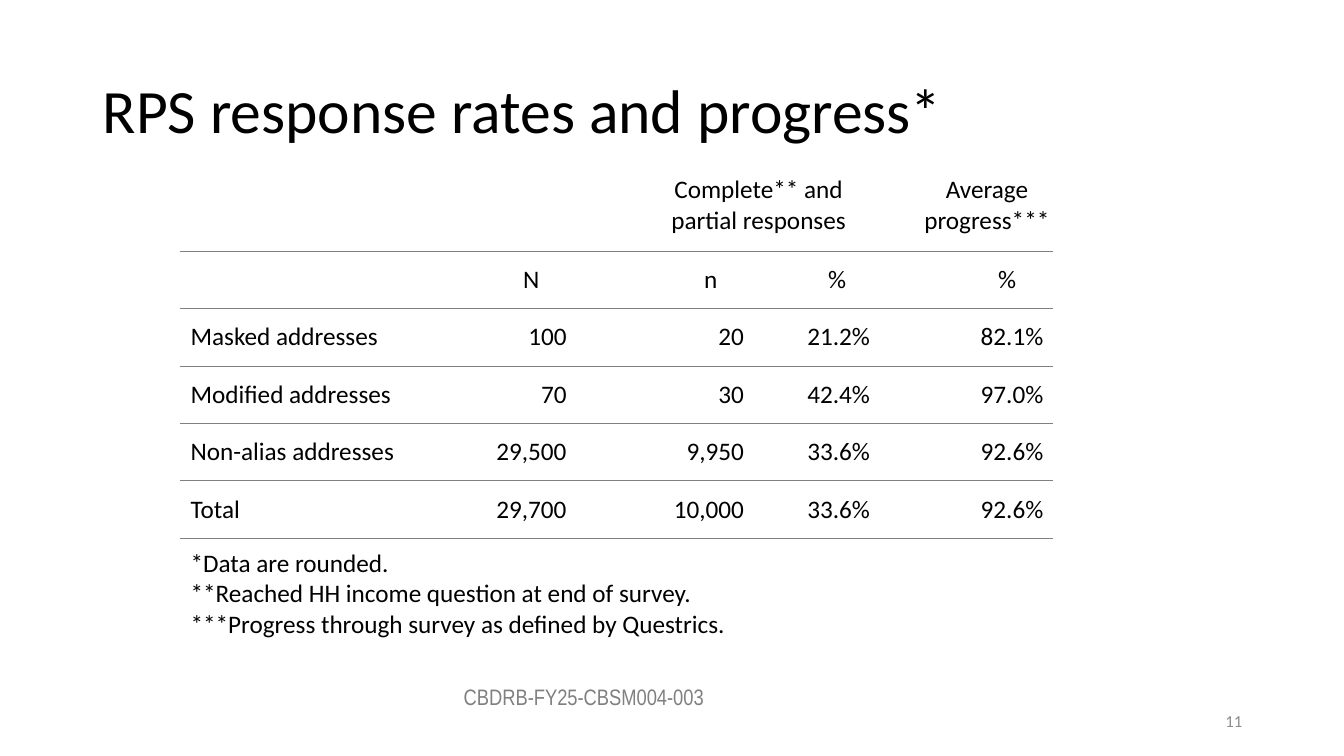
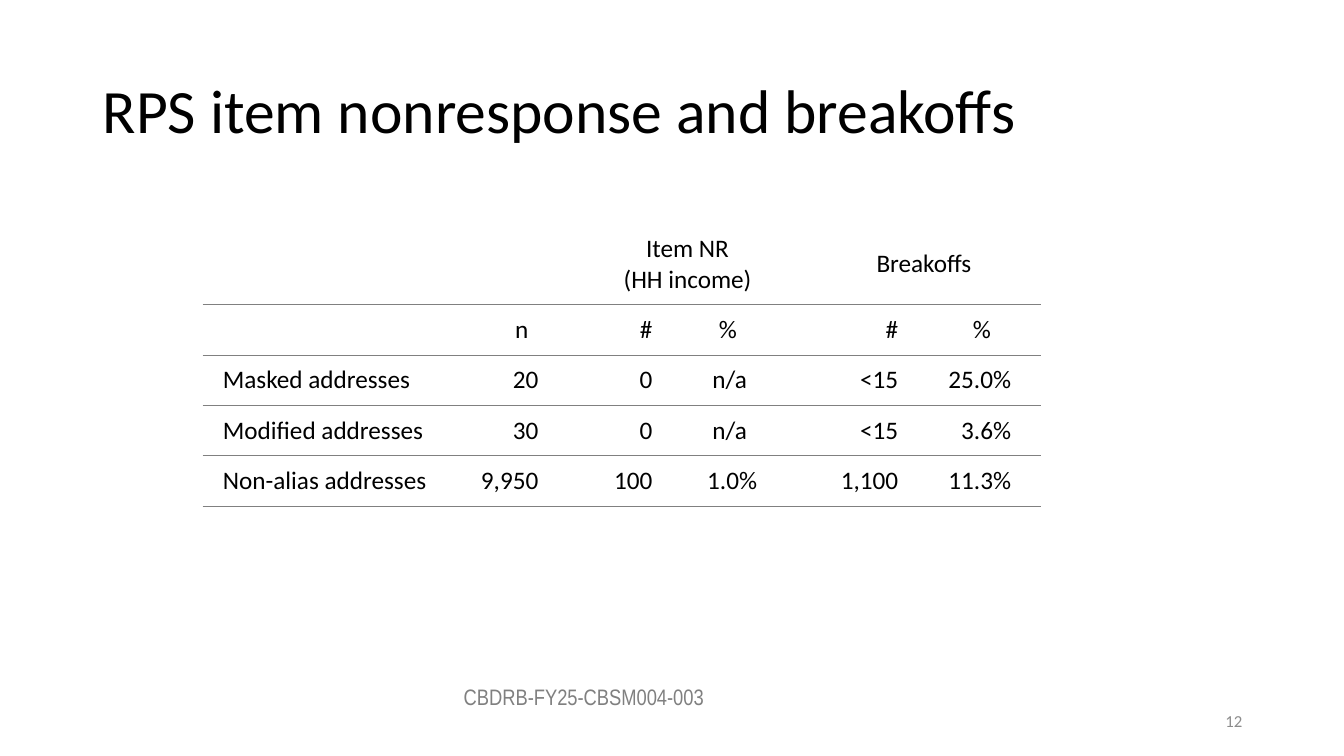
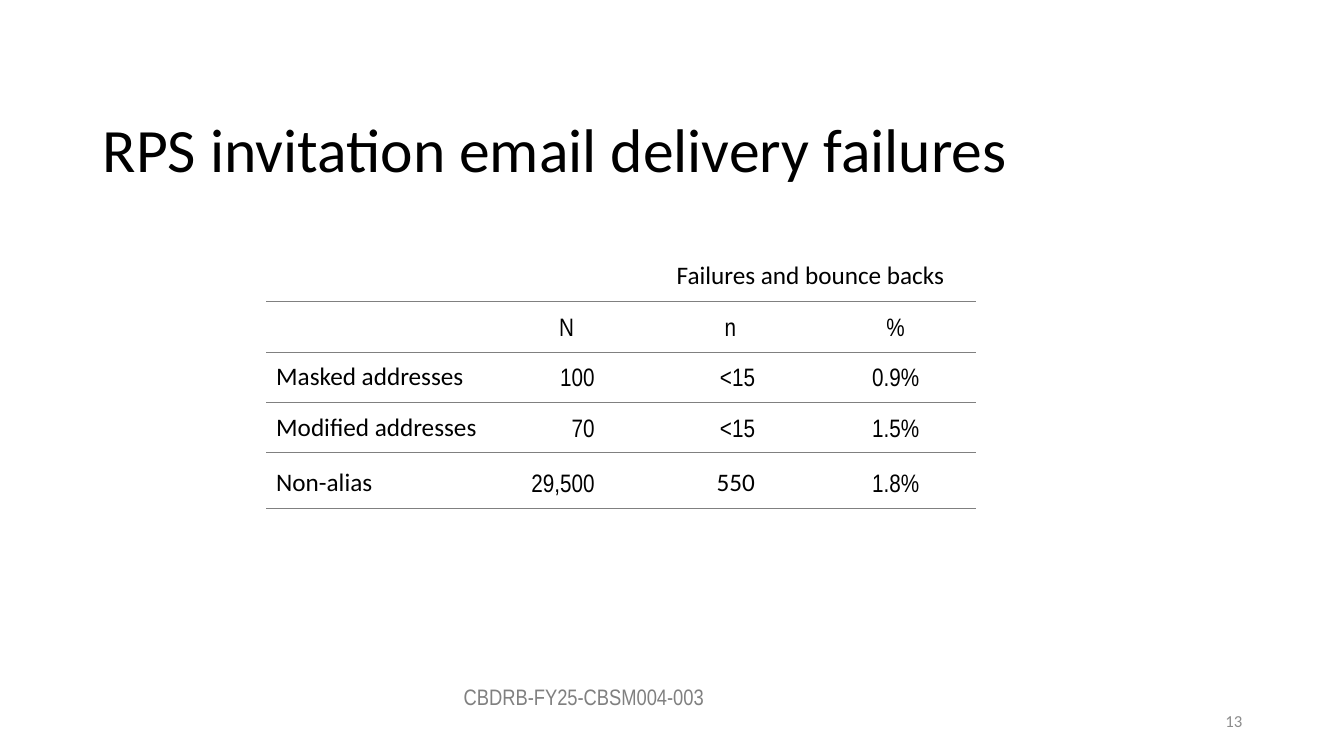
import dataclasses

import pptx
import pptx.dml.color
import pptx.enum.text
import pptx.oxml
import pptx.oxml.ns
import pptx.util

ALIGN = pptx.enum.text.PP_ALIGN
ANCHOR = pptx.enum.text.MSO_ANCHOR
SLIDE_WIDTH = pptx.util.Inches(13.33)
SLIDE_HEIGHT = pptx.util.Inches(7.5)
BODY_FONT = "Calibri"
NARROW_FONT = "Arial Narrow"
BLACK = "000000"
GRAY = "808080"
NUMBER_GRAY = "8C8C8C"
PLAIN_TABLE_STYLE = "{2D5ABB26-0587-4C30-8999-92F81FD0307C}"
FOOTER = "CBDRB-FY25-CBSM004-003"


@dataclasses.dataclass
class Cell:
    """Text of a table cell with its side insets in inches."""
    text: str = ""
    align: ALIGN = ALIGN.LEFT
    left: float = 0.1
    right: float = 0.1
    font: str = BODY_FONT
    span: int = 1


def across(percent):
    """Turn a percentage of the slide's width into a length."""
    return round(SLIDE_WIDTH * percent / 100)


def down(percent):
    """Turn a percentage of the slide's height into a length."""
    return round(SLIDE_HEIGHT * percent / 100)


def color(value):
    """Turn a hex string into a colour."""
    return pptx.dml.color.RGBColor.from_string(value)


def write(frame, text, size=18, font=BODY_FONT, fill=BLACK, align=ALIGN.LEFT, spacing=None):
    """Write one paragraph per line of the text."""
    for index, line in enumerate(text.split("\n")):
        paragraph = frame.add_paragraph() if index else frame.paragraphs[0]
        paragraph.alignment = align
        paragraph.line_spacing = spacing
        run = paragraph.add_run()
        run.text = line
        run.font.size = pptx.util.Pt(size)
        run.font.name = font
        run.font.color.rgb = color(fill)


def add_text(slide, left, top, width, height, text, anchor=ANCHOR.MIDDLE, inset=None, **style):
    """Add a text box placed by percentages of the slide."""
    box = slide.shapes.add_textbox(across(left), down(top), across(width), down(height))
    frame = box.text_frame
    frame.word_wrap = True
    frame.vertical_anchor = anchor
    if inset is not None:
        frame.margin_left = frame.margin_right = pptx.util.Inches(inset)
        frame.margin_top = frame.margin_bottom = pptx.util.Inches(inset)
    write(frame, text, **style)


def add_slide(presentation, number, title, title_top=5.33, title_width=86.27):
    """Add a slide with its title, page number and footer."""
    slide = presentation.slides.add_slide(presentation.slide_layouts[6])
    add_text(slide, 6.9, title_top, title_width, 19.33, title, size=44, spacing=0.9)
    add_text(slide, 70.67, 92.67, 22.51, 5.33, str(number), size=12,
             fill=NUMBER_GRAY, align=ALIGN.RIGHT)
    add_text(slide, 34.13, 89.73, 30.16, 4.93, FOOTER, anchor=ANCHOR.TOP, inset=0.05,
             size=16, font=NARROW_FONT, fill=GRAY)
    return slide


def add_borders(cell, sides):
    """Draw thin gray lines on the given sides of a cell."""
    properties = cell._tc.get_or_add_tcPr()
    for index, side in enumerate(sides):
        line = pptx.oxml.parse_xml(
            f'<a:ln{side} {pptx.oxml.ns.nsdecls("a")} w="{pptx.util.Pt(0.5)}"><a:solidFill>'
            f'<a:srgbClr val="{GRAY}"/></a:solidFill></a:ln{side}>')
        properties.insert(index, line)


def fill_cell(target, content, anchor):
    """Give a table cell its text, insets and anchor."""
    target.vertical_anchor = anchor
    target.margin_left = pptx.util.Inches(content.left)
    target.margin_right = pptx.util.Inches(content.right)
    target.margin_top = target.margin_bottom = pptx.util.Inches(0.1)
    write(target.text_frame, content.text, font=content.font, align=content.align)


def add_table(slide, left, top, widths, heights, rows, anchor=ANCHOR.MIDDLE, notes=False):
    """Add a ruled table; the last row may hold notes without a line below."""
    frame = slide.shapes.add_table(len(heights), len(widths), across(left), down(top),
                                   across(sum(widths)), down(sum(heights)))
    table = frame.table
    table.first_row = table.horz_banding = False
    table._tbl.tblPr.find(pptx.oxml.ns.qn("a:tableStyleId")).text = PLAIN_TABLE_STYLE
    for column, width in zip(table.columns, widths):
        column.width = across(width)
    for row, height in zip(table.rows, heights):
        row.height = down(height)
    for row_index, row in enumerate(rows):
        is_notes = notes and row_index == len(rows) - 1
        sides = "B" if row_index == 0 else "T" if is_notes else "TB"
        for column_index in range(len(widths)):
            cell = table.cell(row_index, column_index)
            cell.fill.background()
            add_borders(cell, sides)
        column_index = 0
        for content in row:
            cell = table.cell(row_index, column_index)
            if content.span > 1:
                cell.merge(table.cell(row_index, column_index + content.span - 1))
            if content.text:
                fill_cell(cell, content, anchor)
            column_index += content.span


def body_rows(formats, records):
    """Give every record the cell formats of its columns."""
    return [[dataclasses.replace(style, text=text) for style, text in zip(formats, record)]
            for record in records]


def add_response_slide(presentation):
    """Add the slide of response rates and progress."""
    slide = add_slide(presentation, 11, "RPS response rates and progress*", title_width=88.82)
    header = [Cell(), Cell(),
              Cell("Complete** and\npartial responses", ALIGN.CENTER, span=2),
              Cell("Average progress***", ALIGN.CENTER, 0.2, 0)]
    units = [Cell(), Cell("N", ALIGN.CENTER, 0.4, 0.3), Cell("n", ALIGN.CENTER, 0.4),
             Cell("%", ALIGN.CENTER), Cell("%", ALIGN.CENTER, 0.7)]
    formats = [Cell(), Cell(align=ALIGN.RIGHT, right=0.5), Cell(align=ALIGN.RIGHT, right=0.3),
               Cell(align=ALIGN.RIGHT, right=0.3), Cell(align=ALIGN.RIGHT, left=0)]
    body = body_rows(formats, [
        ("Masked addresses", "100", "20", "21.2%", "82.1%"),
        ("Modified addresses", "70", "30", "42.4%", "97.0%"),
        ("Non-alias addresses", "29,500", "9,950", "33.6%", "92.6%"),
        ("Total", "29,700", "10,000", "33.6%", "92.6%")])
    notes = [Cell("*Data are rounded.\n"
                  "**Reached HH income question at end of survey.\n"
                  "***Progress through survey as defined by Questrics.", span=5)]
    add_table(slide, 13.43, 21.2, [18.98, 13.5, 11.7, 9.38, 11.4], [12] + [7.6] * 5 + [12],
              [header, units, *body, notes], notes=True)


def add_nonresponse_slide(presentation):
    """Add the slide of item nonresponse and breakoffs."""
    slide = add_slide(presentation, 12, "RPS item nonresponse and breakoffs")
    header = [Cell(), Cell(),
              Cell("Item NR\n(HH income)", ALIGN.CENTER, right=0.01, span=2),
              Cell("Breakoffs", ALIGN.CENTER, right=0.01, span=2)]
    count = Cell(align=ALIGN.RIGHT, left=0.01, right=0.3)
    units = [Cell()] + [dataclasses.replace(count, text=text, right=right) for text, right in
                        [("n", 0.4), ("#", 0.3), ("%", 0.6), ("#", 0.3), ("%", 0.5)]]
    formats = [Cell(left=0.2, right=0.01), count, count,
               dataclasses.replace(count, right=0.5), count, count]
    body = body_rows(formats, [
        ("Masked addresses", "20", "0", "n/a", "<15", "25.0%"),
        ("Modified addresses", "30", "0", "n/a", "<15", "3.6%"),
        ("Non-alias addresses", "9,950", "100", "1.0%", "1,100", "11.3%")])
    body[-1][3].right = 0.4
    add_table(slide, 15.08, 29.6, [17.93, 9.3, 8.48, 8.55, 9.75, 8.4], [5.6] + [6] * 4,
              [header, units, *body])


def add_failure_slide(presentation):
    """Add the slide of email delivery failures."""
    slide = add_slide(presentation, 13, "RPS invitation email delivery failures", title_top=10.53)
    header = [Cell(), Cell(), Cell("Failures and bounce backs", ALIGN.CENTER, span=2)]
    percent = Cell(align=ALIGN.CENTER, font=NARROW_FONT)
    units = [Cell()] + [dataclasses.replace(percent, text=text) for text in ("N", "n", "%")]
    formats = [Cell(), Cell(align=ALIGN.RIGHT, right=0.5, font=NARROW_FONT),
               Cell(align=ALIGN.RIGHT, right=0.6, font=NARROW_FONT), percent]
    body = body_rows(formats, [
        ("Masked addresses", "100", "<15", "0.9%"),
        ("Modified addresses", "70", "<15", "1.5%"),
        ("Non-alias", "29,500", "550", "1.8%")])
    body[-1][2].font = BODY_FONT
    add_table(slide, 19.8, 29.87, [16.5, 11.7, 12.68, 11.93], [10, 6, 6.27, 6.27, 7.33],
              [header, units, *body], anchor=ANCHOR.BOTTOM)


def main():
    """Build and save the presentation."""
    presentation = pptx.Presentation()
    presentation.slide_width = SLIDE_WIDTH
    presentation.slide_height = SLIDE_HEIGHT
    add_response_slide(presentation)
    add_nonresponse_slide(presentation)
    add_failure_slide(presentation)
    presentation.save("out.pptx")


if __name__ == "__main__":
    main()
